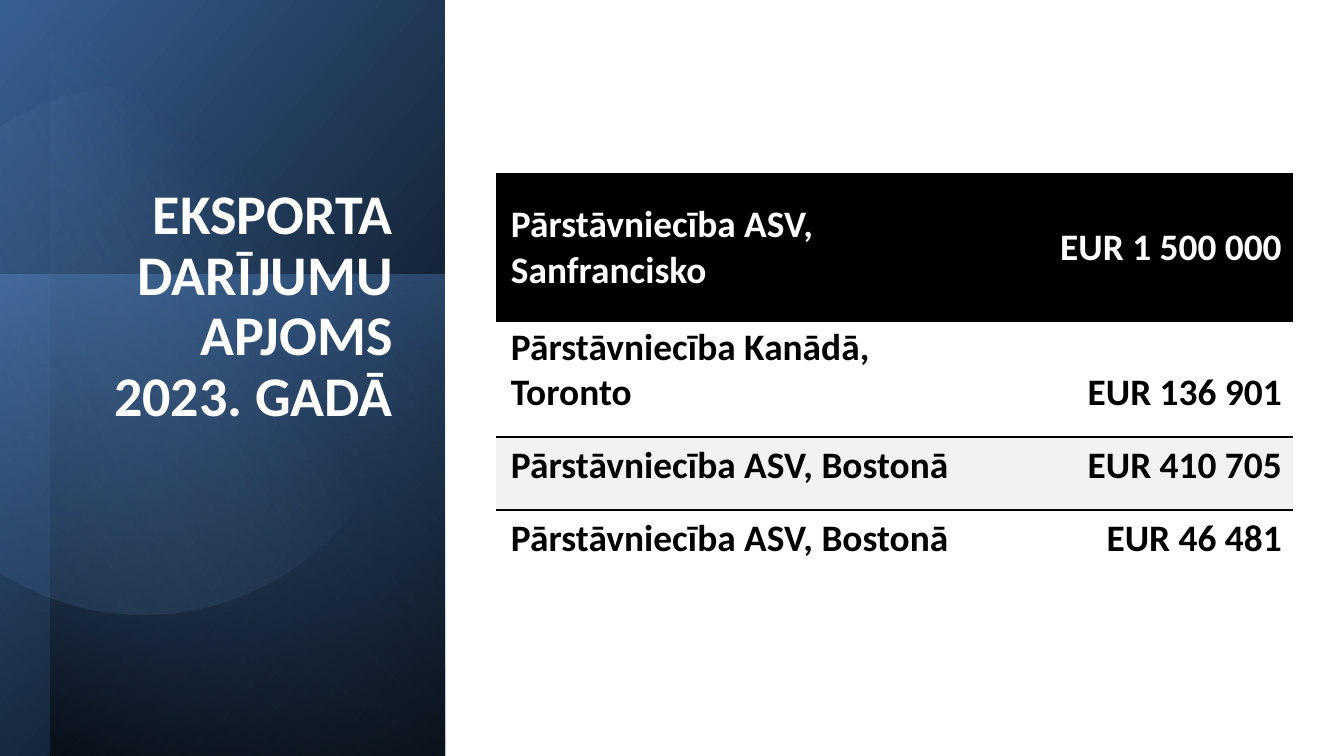
import math

import lxml.etree
import pptx
import pptx.dml.color
import pptx.enum.shapes
import pptx.enum.text
import pptx.oxml
import pptx.oxml.ns
import pptx.util

EMU_PER_PX = 914400 / 134.4
FONT = "Calibri"
COLORS = {
    "black": "000000",
    "white": "FFFFFF",
    "band": "F2F2F2",
    "navy": "254061",
    "blue": "376092",
    "bright": "4F81BD",
    "pale": "95B3D7",
}
NO_GRID_STYLE = "{2D5ABB26-0587-4C30-8999-92F81FD0307C}"
EXPORTS = [
    ("Pārstāvniecība ASV, Sanfrancisko", "EUR 1 500 000"),
    ("Pārstāvniecība Kanādā, Toronto", "EUR 136 901"),
    ("Pārstāvniecība ASV, Bostonā", "EUR 410 705"),
    ("Pārstāvniecība ASV, Bostonā", "EUR 46 481"),
]


def px(length):
    return pptx.util.Emu(round(length * EMU_PER_PX))


def rgb(color):
    return pptx.dml.color.RGBColor.from_string(COLORS[color])


def parse_xml(tag, attributes, content):
    namespace = pptx.oxml.ns.nsdecls("a")
    return pptx.oxml.parse_xml(
        f"<a:{tag} {namespace} {attributes}>{content}</a:{tag}>")


def fill_gradient(shape, stops, angle):
    """Fill with (position %, colour, opacity %) stops, clockwise angle in degrees."""
    shape.shadow.inherit = False
    shape.line.fill.background()
    shape.fill.background()
    stop_xml = "".join(
        f'<a:gs pos="{position * 1000}"><a:srgbClr val="{COLORS[color]}">'
        f'<a:alpha val="{opacity * 1000}"/></a:srgbClr></a:gs>'
        for position, color, opacity in stops)
    gradient = parse_xml(
        "gradFill", 'rotWithShape="1"',
        f'<a:gsLst>{stop_xml}</a:gsLst><a:lin ang="{angle * 60000}" scaled="0"/>')
    properties = shape._element.spPr
    no_fill = properties.find(pptx.oxml.ns.qn("a:noFill"))
    properties.replace(no_fill, gradient)


def add_turned_panel(slide, box, rotation, flipped, stops, angle):
    """Add a quarter-turned rectangle that covers box once it is turned."""
    left, top, width, height = box
    panel = slide.shapes.add_shape(
        pptx.enum.shapes.MSO_SHAPE.RECTANGLE,
        px(left + (width - height) / 2), px(top + (height - width) / 2),
        px(height), px(width))
    panel.rotation = rotation
    if flipped:
        panel._element.spPr.xfrm.set("flipH", "1")
    fill_gradient(panel, stops, angle)


def add_cut_circle(slide, center_x, center_y, radius, stops, angle):
    """Add a circle cut off by the left edge of the slide."""
    limit = math.acos(-center_x / radius)
    steps = 120
    points = []
    for step in range(steps + 1):
        turn = limit * (2 * step / steps - 1)
        points.append((px(center_x + radius * math.cos(turn)),
                       px(center_y + radius * math.sin(turn))))
    builder = slide.shapes.build_freeform(*points[0])
    builder.add_line_segments(points[1:], close=True)
    fill_gradient(builder.convert_to_shape(), stops, angle)


def format_text(paragraph, size, color, alignment):
    paragraph.alignment = alignment
    for run in paragraph.runs:
        run.font.name = FONT
        run.font.size = pptx.util.Pt(size)
        run.font.bold = True
        run.font.color.rgb = rgb(color)


def add_title(slide, text):
    title = slide.shapes.add_textbox(px(89), px(180), px(317), px(339))
    title.text_frame.word_wrap = True
    title.text_frame.text = text
    paragraph = title.text_frame.paragraphs[0]
    paragraph.line_spacing = 0.9
    format_text(paragraph, 30, "white", pptx.enum.text.PP_ALIGN.RIGHT)


def add_border(cell, side):
    line = parse_xml(
        side, 'w="12700"',
        f'<a:solidFill><a:srgbClr val="{COLORS["black"]}"/></a:solidFill>')
    cell._tc.get_or_add_tcPr().insert(0, line)


def fill_cell(cell, text, row, alignment):
    is_header = row == 0
    cell.text = text
    cell.margin_left, cell.margin_right = px(15), px(11)
    cell.margin_top, cell.margin_bottom = px(21 if is_header else 1), px(21)
    anchors = pptx.enum.text.MSO_ANCHOR
    cell.vertical_anchor = anchors.MIDDLE if is_header else anchors.BOTTOM
    format_text(cell.text_frame.paragraphs[0], 20,
                "white" if is_header else "black", alignment)
    fill_color = {0: "black", 2: "band"}.get(row)
    if fill_color:
        cell.fill.solid()
        cell.fill.fore_color.rgb = rgb(fill_color)
    else:
        cell.fill.background()
    border_side = {1: "lnB", 2: "lnT"}.get(row)
    if border_side:
        add_border(cell, border_side)


def add_export_table(slide):
    widths, heights = (489, 308), (149, 115, 73, 73)
    frame = slide.shapes.add_table(
        len(EXPORTS), len(widths), px(496), px(173),
        px(sum(widths)), px(sum(heights)))
    table = frame.table
    table.horz_banding = False
    table._tbl.tblPr.find(pptx.oxml.ns.qn("a:tableStyleId")).text = NO_GRID_STYLE
    for column, width in zip(table.columns, widths):
        column.width = px(width)
    alignments = (pptx.enum.text.PP_ALIGN.LEFT, pptx.enum.text.PP_ALIGN.RIGHT)
    for row, (texts, height) in enumerate(zip(EXPORTS, heights)):
        table.rows[row].height = px(height)
        for column, text in enumerate(texts):
            fill_cell(table.cell(row, column), text, row, alignments[column])


def main():
    presentation = pptx.Presentation()
    presentation.slide_width, presentation.slide_height = px(1344), px(756)
    slide = presentation.slides.add_slide(presentation.slide_layouts[6])

    add_turned_panel(slide, (0, 0, 445, 756), 90, True,
                     [(0, "black", 100), (100, "blue", 100)], 50)
    add_turned_panel(slide, (0, 275, 445, 481), 270, False,
                     [(0, "bright", 50), (100, "navy", 0)], 170)
    add_turned_panel(slide, (50, 0, 395, 756), 270, True,
                     [(0, "black", 59), (69, "bright", 0)], 140)
    add_cut_circle(slide, 144, 350, 265,
                   [(39, "pale", 0), (100, "blue", 26)], 152)
    add_title(slide, "EKSPORTA DARĪJUMU APJOMS 2023. GADĀ")
    add_export_table(slide)
    presentation.save("out.pptx")


if __name__ == "__main__":
    main()
